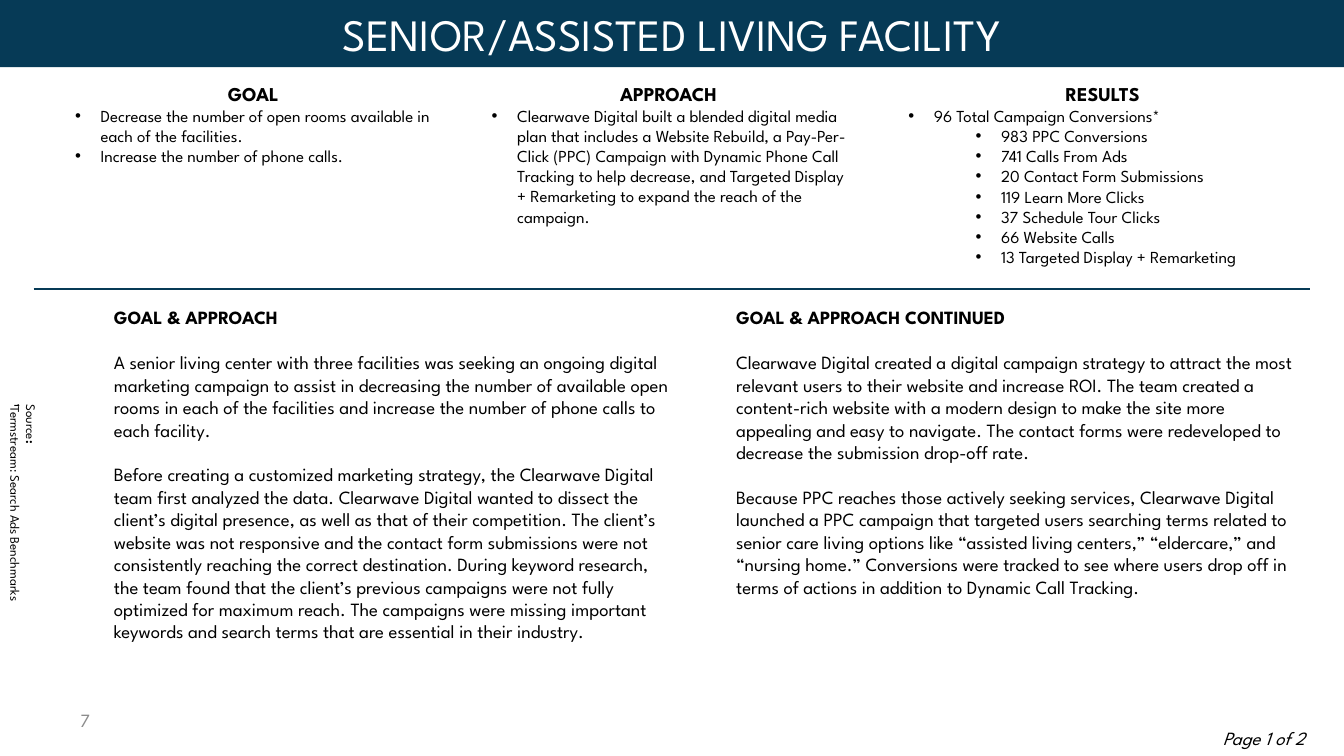
import pptx
import pptx.util
import pptx.dml.color
import pptx.enum.shapes
import pptx.enum.text
import pptx.oxml
import pptx.oxml.ns

TITLE = "SENIOR/ASSISTED LIVING FACILITY"
PAGE = "Page 1 of 2"
NUMBER = "7"

COLUMNS = [
    ("GOAL", 2.85, 0.92, [
        (0, "Decrease the number of open rooms available in each of the facilities."),
        (0, "Increase the number of phone calls."),
    ]),
    ("APPROACH", 2.83, 1.34, [
        (0, "Clearwave Digital built a blended digital media plan that includes a "
            "Website Rebuild, a Pay-Per-Click (PPC) Campaign with Dynamic Phone Call "
            "Tracking to help decrease, and Targeted Display + Remarketing to expand "
            "the reach of the campaign."),
    ]),
    ("RESULTS", 3.09, 1.49, [
        (0, "96 Total Campaign Conversions*"),
        (1, "983 PPC Conversions"),
        (1, "741 Calls From Ads"),
        (1, "20 Contact Form Submissions"),
        (1, "119 Learn More Clicks"),
        (1, "37 Schedule Tour Clicks"),
        (1, "66 Website Calls"),
        (1, "13 Targeted Display + Remarketing"),
    ]),
]

STORIES = [
    ("GOAL & APPROACH", (0.75, 2.23, 4.33, 3.13), [
        "A senior living center with three facilities was seeking an ongoing digital "
        "marketing campaign to assist in decreasing the number of available open rooms "
        "in each of the facilities and increase the number of phone calls to each facility.",
        "Before creating a customized marketing strategy, the Clearwave Digital team first "
        "analyzed the data. Clearwave Digital wanted to dissect the client’s digital "
        "presence, as well as that of their competition. The client’s website was not "
        "responsive and the contact form submissions were not consistently reaching the "
        "correct destination. During keyword research, the team found that the client’s "
        "previous campaigns were not fully optimized for maximum reach. The campaigns were "
        "missing important keywords and search terms that are essential in their industry.",
    ]),
    ("GOAL & APPROACH CONTINUED", (5.38, 2.23, 4.37, 2.98), [
        "Clearwave Digital created a digital campaign strategy to attract the most relevant "
        "users to their website and increase ROI. The team created a content-rich website "
        "with a modern design to make the site more appealing and easy to navigate. The "
        "contact forms were redeveloped to decrease the submission drop-off rate.",
        "Because PPC reaches those actively seeking services, Clearwave Digital launched a "
        "PPC campaign that targeted users searching terms related to senior care living "
        "options like “assisted living centers,” “eldercare,” and “nursing home.” "
        "Conversions were tracked to see where users drop off in terms of actions in "
        "addition to Dynamic Call Tracking.",
    ]),
]

SOURCE = [
    [("Source", {}), (":", {"bold": True})],
    [("1", {"bold": True, "raised": True}), ("Termstream: Search Ads Benchmarks", {})],
]

THEME = {
    "font": "League Spartan", "mark": "Arial",
    "navy": "063A56", "black": "000000", "white": "FFFFFF", "gray": "8C8C8C",
    "title": 24, "head": 10.5, "list": 9, "body": 10, "note": 7,
}

Inches = pptx.util.Inches
Pt = pptx.util.Pt
Align = pptx.enum.text.PP_ALIGN
Anchor = pptx.enum.text.MSO_ANCHOR
Shapes = pptx.enum.shapes
SPACE = pptx.oxml.ns.nsdecls("a")


def rgb(name):
    return pptx.dml.color.RGBColor.from_string(THEME[name])


def write(para, text, size="body", color="black", bold=False, italic=False,
          raised=False, align=Align.LEFT, before=0, level=None):
    para.alignment = align
    para.space_before = Pt(before)
    run = para.add_run()
    run.text = text
    font = run.font
    font.name = THEME["font"]
    font.size = Pt(THEME[size])
    font.bold = bold
    font.italic = italic
    font.color.rgb = rgb(color)
    if raised:
        font._element.set("baseline", "30000")
    if level is not None:
        para.level = level
        props = para._p.get_or_add_pPr()
        props.set("marL", str(Inches(0.19 + 0.5 * level)))
        props.set("indent", str(Inches(-0.19)))
        for tag in (f'buFont {SPACE} typeface="{THEME["mark"]}"',
                    f'buChar {SPACE} char="•"'):
            props.append(pptx.oxml.parse_xml(f"<a:{tag}/>"))


def add_box(slide, area, wrap=True):
    box = slide.shapes.add_textbox(*map(Inches, area))
    box.text_frame.word_wrap = wrap
    return box


def add_band(slide):
    band = slide.shapes.add_shape(
        Shapes.MSO_SHAPE.RECTANGLE, 0, 0, Inches(10), Inches(0.5))
    band.shadow.inherit = False
    band.fill.solid()
    band.fill.fore_color.rgb = rgb("navy")
    band.line.fill.background()
    band.text_frame.vertical_anchor = Anchor.TOP
    write(band.text_frame.paragraphs[0], TITLE, size="title", color="white",
          align=Align.CENTER)


def add_rule(slide):
    rule = slide.shapes.add_connector(
        Shapes.MSO_CONNECTOR.STRAIGHT,
        Inches(0.25), Inches(2.15), Inches(9.75), Inches(2.15))
    rule.line.color.rgb = rgb("navy")
    rule.line.width = Pt(1.5)
    rule._element.spPr.append(pptx.oxml.parse_xml(f"<a:effectLst {SPACE}/>"))


def main():
    deck = pptx.Presentation()
    deck.slide_width = Inches(10)
    deck.slide_height = deck.slide_width * 9 // 16
    slide = deck.slides.add_slide(deck.slide_layouts[6])

    foot = add_box(slide, (0.5, 5.21, 2.33, 0.3)).text_frame
    foot.vertical_anchor = Anchor.MIDDLE
    write(foot.paragraphs[0], NUMBER, color="gray")

    side = add_box(slide, (-0.87, 3.78, 2.08, 0.34), wrap=False)
    side.rotation = 90
    side.text_frame.add_paragraph()
    for para, runs in zip(side.text_frame.paragraphs, SOURCE):
        for text, style in runs:
            write(para, text, size="note", **style)

    add_band(slide)
    add_rule(slide)

    for i, (head, width, height, items) in enumerate(COLUMNS):
        frame = add_box(slide, (0.46 + 3.1 * i, 0.56, width, height)).text_frame
        write(frame.paragraphs[0], head, size="head", bold=True, align=Align.CENTER)
        for level, text in items:
            write(frame.add_paragraph(), text, size="list", level=level)

    for head, area, texts in STORIES:
        frame = add_box(slide, area).text_frame
        write(frame.paragraphs[0], head, bold=True)
        for text in texts:
            write(frame.add_paragraph(), text, before=12)

    page = add_box(slide, (9, 5.36, 1, 0.27)).text_frame
    write(page.paragraphs[0], PAGE, italic=True)

    deck.save("out.pptx")


if __name__ == "__main__":
    main()
